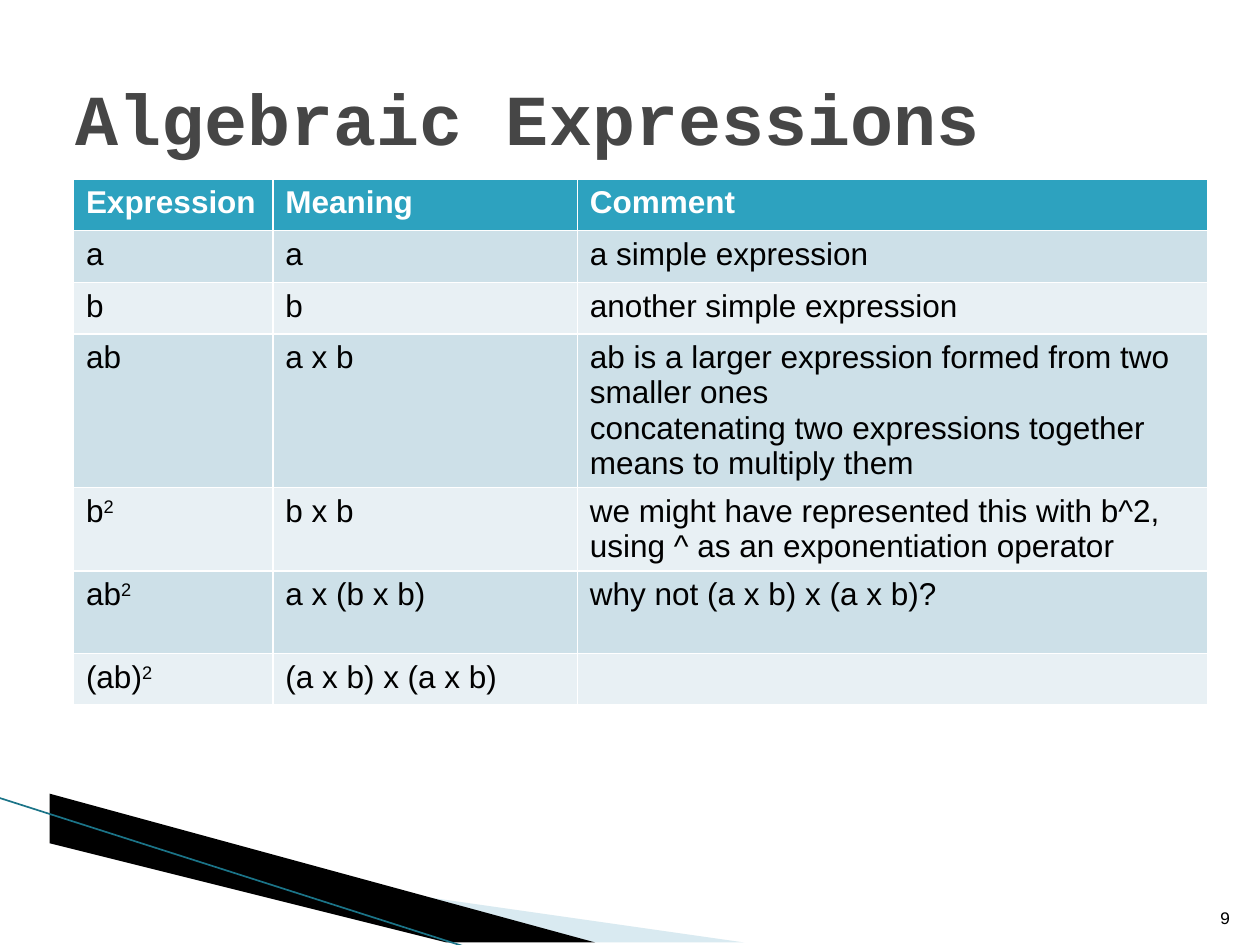
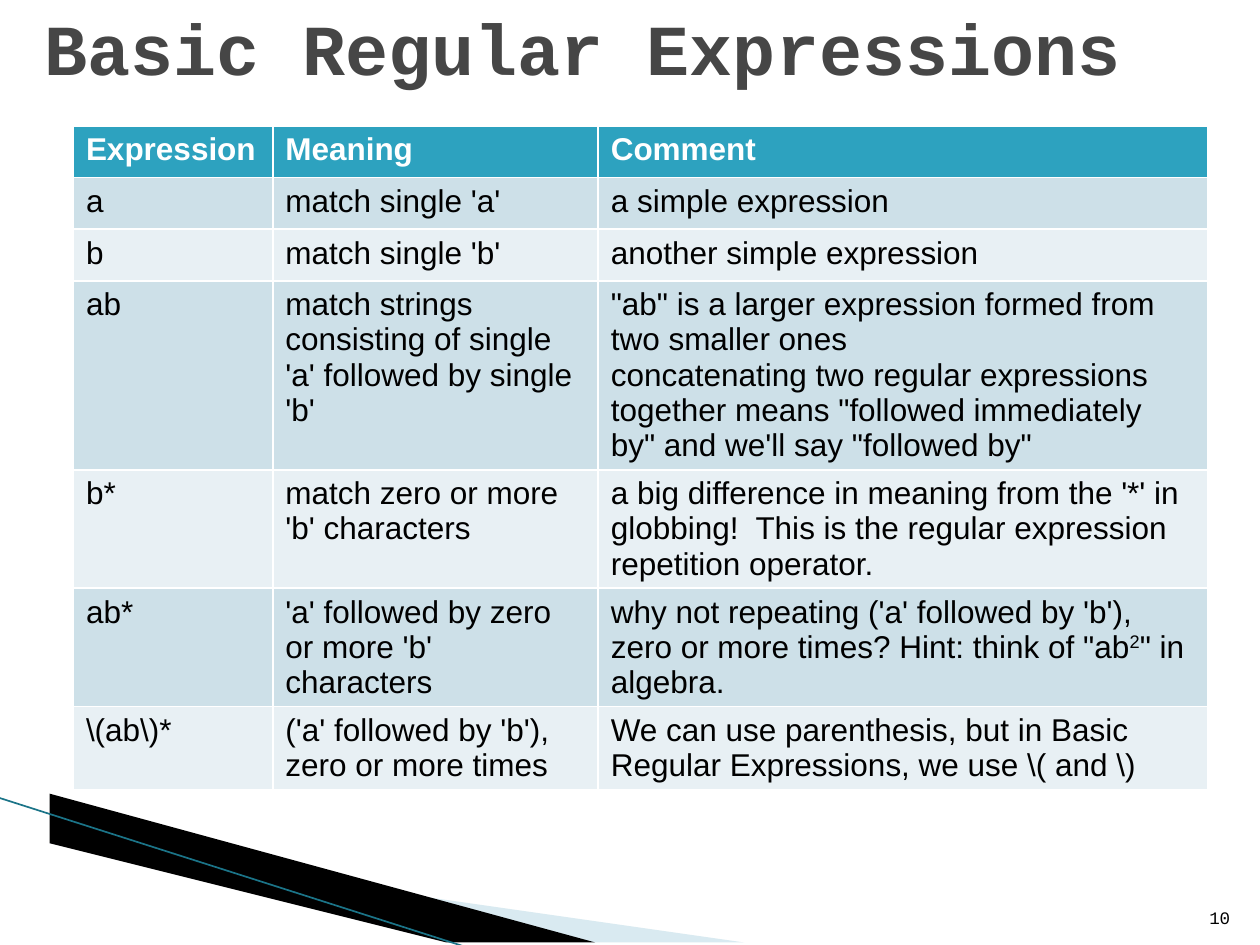
import lxml.etree
import pptx
import pptx.dml.color
import pptx.enum.shapes
import pptx.enum.text
import pptx.oxml.ns
import pptx.util

Cm = pptx.util.Cm
Pt = pptx.util.Pt
RGBColor = pptx.dml.color.RGBColor
qn = pptx.oxml.ns.qn

WHITE = RGBColor(0xFF, 0xFF, 0xFF)
BLACK = RGBColor(0x00, 0x00, 0x00)
TITLE_GRAY = RGBColor(0x46, 0x46, 0x46)
HEADER_TEAL = RGBColor(0x2D, 0xA2, 0xBF)
ROW_BANDS = (RGBColor(0xCD, 0xE0, 0xE8), RGBColor(0xE8, 0xF0, 0xF4))
WEDGE_BLUE = RGBColor(0xA0, 0xCB, 0xDC)
EDGE_TEAL = RGBColor(0x1B, 0x74, 0x88)
SANS, MONO = "Arial", "Courier New"
TITLE_ONLY = 5

HEADINGS = ("Expression", "Meaning", "Comment")

ALGEBRA_ROWS = [
    (1, "a", "a", "a simple expression"),
    (1, "b", "b", "another simple expression"),
    (4, "ab", "a x b",
     "ab is a larger expression formed from two smaller ones\n"
     "concatenating two expressions together means to multiply them"),
    (2, "b²", "b x b",
     "we might have represented this with b^2, using ^ as an exponentiation operator"),
    (2, "ab²", "a x (b x b)", "why not (a x b) x (a x b)?"),
    (1, "(ab)²", "(a x b) x (a x b)", ""),
]

REGEX_ROWS = [
    (1, "a", "match single 'a'", "a simple expression"),
    (1, "b", "match single 'b'", "another simple expression"),
    (5, "ab", "match strings consisting of single 'a' followed by single 'b'",
     '"ab" is a larger expression formed from two smaller ones\n'
     'concatenating two regular expressions together means "followed immediately by" '
     'and we\'ll say "followed by"'),
    (3, "b*", "match zero or more 'b' characters",
     "a big difference in meaning from the '*' in globbing!  "
     "This is the regular expression repetition operator."),
    (3, "ab*", "'a' followed by zero or more 'b' characters",
     "why not repeating ('a' followed by 'b'), zero or more times? "
     'Hint: think of "ab²" in algebra.'),
    (2, r"\(ab\)*", "('a' followed by 'b'), zero or more times",
     r"We can use parenthesis, but in Basic Regular Expressions, we use \( and \)"),
]


def style(paragraph, name, size, color, bold=False):
    """Set the font of a whole paragraph."""
    font = paragraph.font
    font.name, font.size, font.bold = name, Pt(size), bold
    font.color.rgb = color


def add_wedge(slide, left, top, points, color, opacity=100):
    """Draw a filled polygon from points in cm relative to a corner."""
    (start_x, start_y), *rest = [(left + x, top + y) for x, y in points]
    outline = slide.shapes.build_freeform(start_x, start_y, scale=Cm(1))
    outline.add_line_segments(rest, close=True)
    wedge = outline.convert_to_shape()
    wedge.shadow.inherit = False
    wedge.fill.solid()
    wedge.fill.fore_color.rgb = color
    wedge.line.fill.background()
    if opacity < 100:
        fill_color = wedge.fill._xPr.find(qn("a:solidFill"))[0]
        alpha = lxml.etree.SubElement(fill_color, qn("a:alpha"))
        alpha.set("val", str(opacity * 1000))


def add_corner(slide, left, top):
    """Draw the wedges and the slanted edge at the bottom left."""
    add_wedge(slide, left, top,
              [(1.4, 0.46), (15.11, 3), (11.58, 3), (1.4, 0.43)], WEDGE_BLUE, 40)
    add_wedge(slide, left, top,
              [(1.35, 0.4), (11.61, 3), (9.45, 3.02), (1.37, 0.43)], BLACK)
    edge = slide.shapes.add_connector(
        pptx.enum.shapes.MSO_CONNECTOR.STRAIGHT,
        Cm(left - 0.03), Cm(top), Cm(left + 9.42), Cm(top + 3.02))
    edge.line.color.rgb = EDGE_TEAL
    edge.line.width = Pt(0.95)
    lxml.etree.SubElement(edge._element.spPr, qn("a:effectLst"))


def add_title(slide, left, top, wording):
    """Move and fill the title placeholder."""
    title = slide.shapes.title
    title.left, title.top, title.width, title.height = Cm(left), Cm(top), Cm(22.86), Cm(3.18)
    title.text_frame.text = wording
    title.text_frame.vertical_anchor = pptx.enum.text.MSO_ANCHOR.MIDDLE
    heading = title.text_frame.paragraphs[0]
    heading.alignment = pptx.enum.text.PP_ALIGN.LEFT
    style(heading, MONO, 41, TITLE_GRAY, True)


def add_page_number(slide, left, top, number):
    """Write the page number in the bottom right corner."""
    frame = slide.shapes.add_textbox(Cm(left), Cm(top), Cm(1.02), Cm(1.02)).text_frame
    frame.word_wrap = True
    frame.vertical_anchor = pptx.enum.text.MSO_ANCHOR.BOTTOM
    frame.text = str(number)
    frame.paragraphs[0].alignment = pptx.enum.text.PP_ALIGN.RIGHT
    style(frame.paragraphs[0], MONO, 10, BLACK)


def fill_cell(cell, wording, background, color, bold):
    """Fill a cell, raising every ² as a superscript 2."""
    cell.fill.solid()
    cell.fill.fore_color.rgb = background
    for index, line in enumerate(wording.split("\n")):
        frame = cell.text_frame
        paragraph = frame.add_paragraph() if index else frame.paragraphs[0]
        style(paragraph, SANS, 18, color, bold)
        before, power, after = line.partition("²")
        if before:
            paragraph.add_run().text = before
        if power:
            exponent = paragraph.add_run()
            exponent.text = "2"
            exponent._r.get_or_add_rPr().set("baseline", "30000")
        if after:
            paragraph.add_run().text = after


def add_expressions(slide, left, top, widths, rows):
    """Add the table of expressions, each row as high as its line count."""
    lines = [(1, *HEADINGS), *rows]
    heights = [max(1.04, 0.25 + 0.71 * count) for count, *_ in lines]
    table = slide.shapes.add_table(
        len(lines), len(widths), Cm(left), Cm(top), Cm(sum(widths)), Cm(sum(heights))).table
    for column, width in zip(table.columns, widths):
        column.width = Cm(width)
    for index, (_, *wordings) in enumerate(lines):
        table.rows[index].height = Cm(heights[index])
        header = index == 0
        background = HEADER_TEAL if header else ROW_BANDS[(index - 1) % 2]
        for cell, wording in zip(table.rows[index].cells, wordings):
            fill_cell(cell, wording, background, WHITE if header else BLACK, header)


def add_table_slide(deck, number, wording, title_at, table_top, widths, rows):
    """Build one slide with a title, a table and the shared corner."""
    slide = deck.slides.add_slide(deck.slide_layouts[TITLE_ONLY])
    add_corner(slide, 0, 16.08)
    add_expressions(slide, 1.48, table_top, widths, rows)
    add_title(slide, *title_at, wording)
    add_page_number(slide, 24.03, 17.81, number)


def main():
    """Build and save the deck."""
    deck = pptx.Presentation()
    deck.slide_width, deck.slide_height = Cm(25.4), Cm(19.05)
    add_table_slide(deck, 9, "Algebraic Expressions", (1.27, 0.76), 3.61,
                    (4.02, 6.14, 12.7), ALGEBRA_ROWS)
    add_table_slide(deck, 10, "Basic Regular Expressions", (0.64, -0.64), 2.54,
                    (4.02, 6.56, 12.28), REGEX_ROWS)
    deck.save("out.pptx")


if __name__ == "__main__":
    main()
